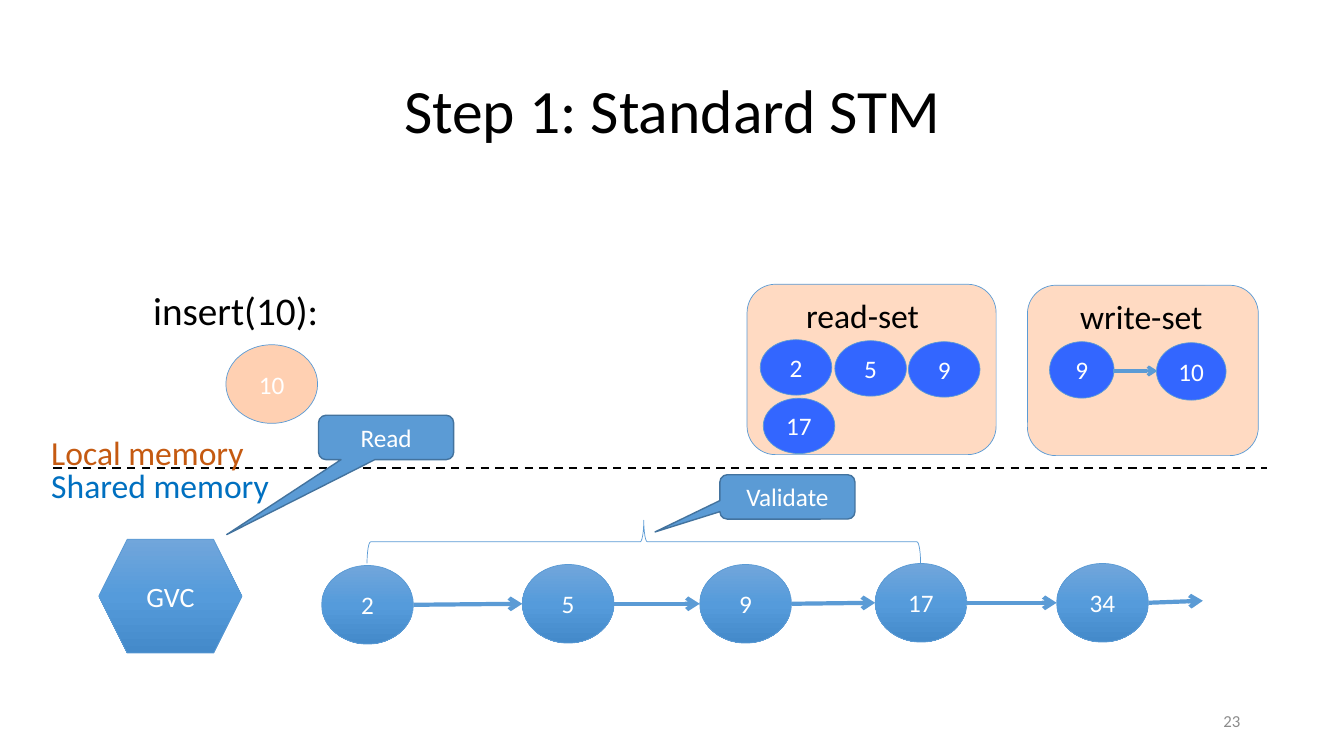
from copy import deepcopy

from lxml import etree
from pptx import Presentation
from pptx.dml.color import RGBColor
from pptx.enum.dml import MSO_LINE
from pptx.enum.shapes import MSO_CONNECTOR, MSO_SHAPE
from pptx.enum.text import MSO_ANCHOR, PP_ALIGN
from pptx.oxml.ns import qn
from pptx.util import Inches, Pt

FONT = "Calibri"
BLACK = "000000"
WHITE = "FFFFFF"
BLUE = "5B9BD5"
DARK_BLUE = "43739E"
SET_BLUE = "3366FF"
ORANGE = "FF6600"
GRADIENT = [(0, "71A6DB"), (0.5, "559BDB"), (1, "448ACA")]
LEFT, CENTER, RIGHT = PP_ALIGN.LEFT, PP_ALIGN.CENTER, PP_ALIGN.RIGHT
TOP, MIDDLE = MSO_ANCHOR.TOP, MSO_ANCHOR.MIDDLE
DASH = MSO_LINE.DASH
STRAIGHT = MSO_CONNECTOR.STRAIGHT
ELLIPSE = MSO_SHAPE.OVAL
HEXAGON = MSO_SHAPE.HEXAGON
ROUNDED = MSO_SHAPE.ROUNDED_RECTANGLE
CALLOUT = MSO_SHAPE.ROUNDED_RECTANGULAR_CALLOUT
BRACE = MSO_SHAPE.RIGHT_BRACE

NODE_WIDTH, NODE_HEIGHT = 0.91, 0.78
ENTRY_WIDTH, ENTRY_HEIGHT = 0.71, 0.55


def color(value):
    return RGBColor.from_string(value)


def write_text(shape, text, size, value, align=CENTER, anchor=MIDDLE):
    frame = shape.text_frame
    frame.word_wrap = True
    frame.vertical_anchor = anchor
    paragraph = frame.paragraphs[0]
    paragraph.text = text
    paragraph.alignment = align
    paragraph.font.name = FONT
    paragraph.font.size = Pt(size)
    paragraph.font.color.rgb = color(value)
    return paragraph


def add_label(slide, box, text, size, value, align=LEFT, anchor=TOP):
    shape = slide.shapes.add_textbox(*map(Inches, box))
    return write_text(shape, text, size, value, align, anchor)


def add_outlined(slide, kind, box, line=BLUE, width=0.5):
    shape = slide.shapes.add_shape(kind, *map(Inches, box))
    shape.shadow.inherit = False
    shape.line.color.rgb = color(line)
    shape.line.width = Pt(width)
    return shape


def add_solid(slide, kind, box, fill, text="", opacity=100, **outline):
    shape = add_outlined(slide, kind, box, **outline)
    shape.fill.solid()
    shape.fill.fore_color.rgb = color(fill)
    if opacity < 100:
        solid = shape.fill._xPr.find(qn("a:solidFill"))
        etree.SubElement(solid[0], qn("a:alpha"), val=str(opacity * 1000))
    if text:
        write_text(shape, text, 18, WHITE)
    return shape


def add_gradient(slide, kind, box, text, size):
    shape = add_outlined(slide, kind, box)
    shape.fill.gradient()
    shape.fill.gradient_angle = 270
    stop_list = shape._element.spPr.find(qn("a:gradFill")).find(qn("a:gsLst"))
    stop_list.append(deepcopy(stop_list[0]))
    for stop, (position, value) in zip(shape.fill.gradient_stops, GRADIENT):
        stop.position = position
        stop.color.rgb = color(value)
    write_text(shape, text, size, WHITE)


def add_line(slide, start, end, value, width):
    line = slide.shapes.add_connector(STRAIGHT, *map(Inches, start + end))
    line.line.color.rgb = color(value)
    line.line.width = Pt(width)
    etree.SubElement(line._element.spPr, qn("a:effectLst"))
    return line


def add_arrow(slide, start, end, width):
    arrow = add_line(slide, start, end, BLUE, width)
    outline = arrow._element.spPr.get_or_add_ln()
    etree.SubElement(outline, qn("a:tailEnd"), type="arrow")


def add_linked_list(slide):
    nodes = [("2", 3.19, 5.61), ("5", 5.18, 5.6), ("9", 6.94, 5.6),
             ("17", 8.68, 5.59), ("34", 10.48, 5.59)]
    targets = [(left, top + NODE_HEIGHT / 2) for _, left, top in nodes[1:]]
    targets.append((11.93, 5.96))
    for (text, left, top), target in zip(nodes, targets):
        box = (left, top, NODE_WIDTH, NODE_HEIGHT)
        add_gradient(slide, ELLIPSE, box, text, 18)
        start = (left + NODE_WIDTH, top + NODE_HEIGHT / 2)
        add_arrow(slide, start, target, 3)


def add_set_panel(slide, box, title, title_box):
    add_solid(slide, ROUNDED, box, ORANGE, opacity=24)
    add_label(slide, title_box, title, 24, BLACK, CENTER)


def add_read_set(slide):
    add_set_panel(slide, (7.41, 2.82, 2.47, 1.69), "read-set", (7.81, 2.88, 1.49, 0.5))
    entries = [("9", 9.01, 3.39), ("2", 7.54, 3.37), ("5", 8.28, 3.38), ("17", 7.57, 3.95)]
    for text, left, top in entries:
        add_solid(slide, ELLIPSE, (left, top, ENTRY_WIDTH, ENTRY_HEIGHT), SET_BLUE, text)


def add_write_set(slide):
    add_set_panel(slide, (10.19, 2.83, 2.29, 1.69), "write-set", (10.57, 2.89, 1.5, 0.5))
    add_solid(slide, ELLIPSE, (10.41, 3.39, 0.64, 0.56), SET_BLUE, "9")
    add_arrow(slide, (11.04, 3.68), (11.48, 3.68), 2.25)
    add_solid(slide, ELLIPSE, (11.47, 3.4, 0.69, 0.57), SET_BLUE, "10")


def add_memory_border(slide):
    border = add_line(slide, (0.53, 4.64), (12.57, 4.64), BLACK, 1.5)
    border.line.dash_style = DASH
    add_label(slide, (0.41, 4.24, 2.39, 0.5), "Local memory", 24, "C55A11")
    add_label(slide, (0.41, 4.56, 2.39, 0.5), "Shared memory", 24, "0070C0")


def add_callout(slide, left, top, text, pointer):
    box = (left, top, 1.34, 0.44)
    callout = add_solid(slide, CALLOUT, box, BLUE, text, line=DARK_BLUE, width=1)
    for index, value in enumerate(pointer):
        callout.adjustments[index] = value


def main():
    presentation = Presentation()
    presentation.slide_width = Inches(13.33)
    presentation.slide_height = Inches(7.5)
    slide = presentation.slides.add_slide(presentation.slide_layouts[6])

    title = add_label(slide, (0.92, 0.4, 11.5, 1.45), "Step 1: Standard STM",
                      44, BLACK, CENTER, MIDDLE)
    title.line_spacing = 0.9
    add_label(slide, (9.4, 6.95, 3, 0.4), "23", 12, "8C8C8C", RIGHT, MIDDLE)
    operation = add_label(slide, (0.92, 2.84, 4.18, 0.79), "insert(10):", 28, BLACK)
    operation.line_spacing = 0.9
    operation.space_before = Pt(5)
    operation._p.get_or_add_pPr().set("marL", str(Inches(0.5)))

    add_linked_list(slide)
    add_read_set(slide)
    add_write_set(slide)
    add_gradient(slide, HEXAGON, (0.98, 5.35, 1.42, 1.13), "GVC", 20)
    add_solid(slide, ELLIPSE, (2.24, 3.42, NODE_WIDTH, NODE_HEIGHT), ORANGE, "10", 30)
    add_memory_border(slide)
    add_callout(slide, 3.16, 4.12, "Read", (-1.18, 2.19))
    brace = add_outlined(slide, BRACE, (6.17, 2.63, 0.43, 5.49))
    brace.fill.background()
    brace.rotation = 270
    add_callout(slide, 7.14, 4.71, "Validate", (-0.98, 0.79))

    presentation.save("out.pptx")


if __name__ == "__main__":
    main()
